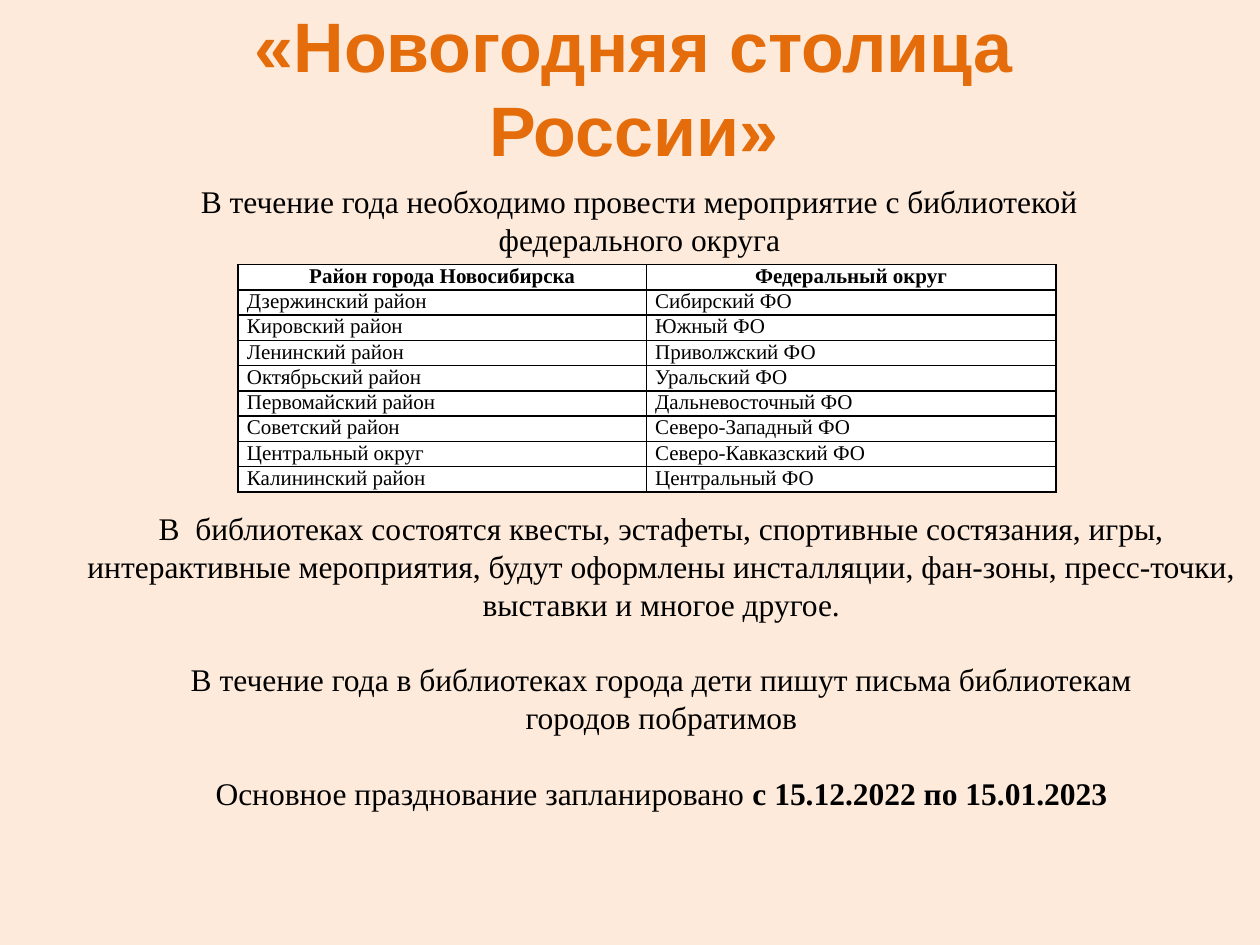
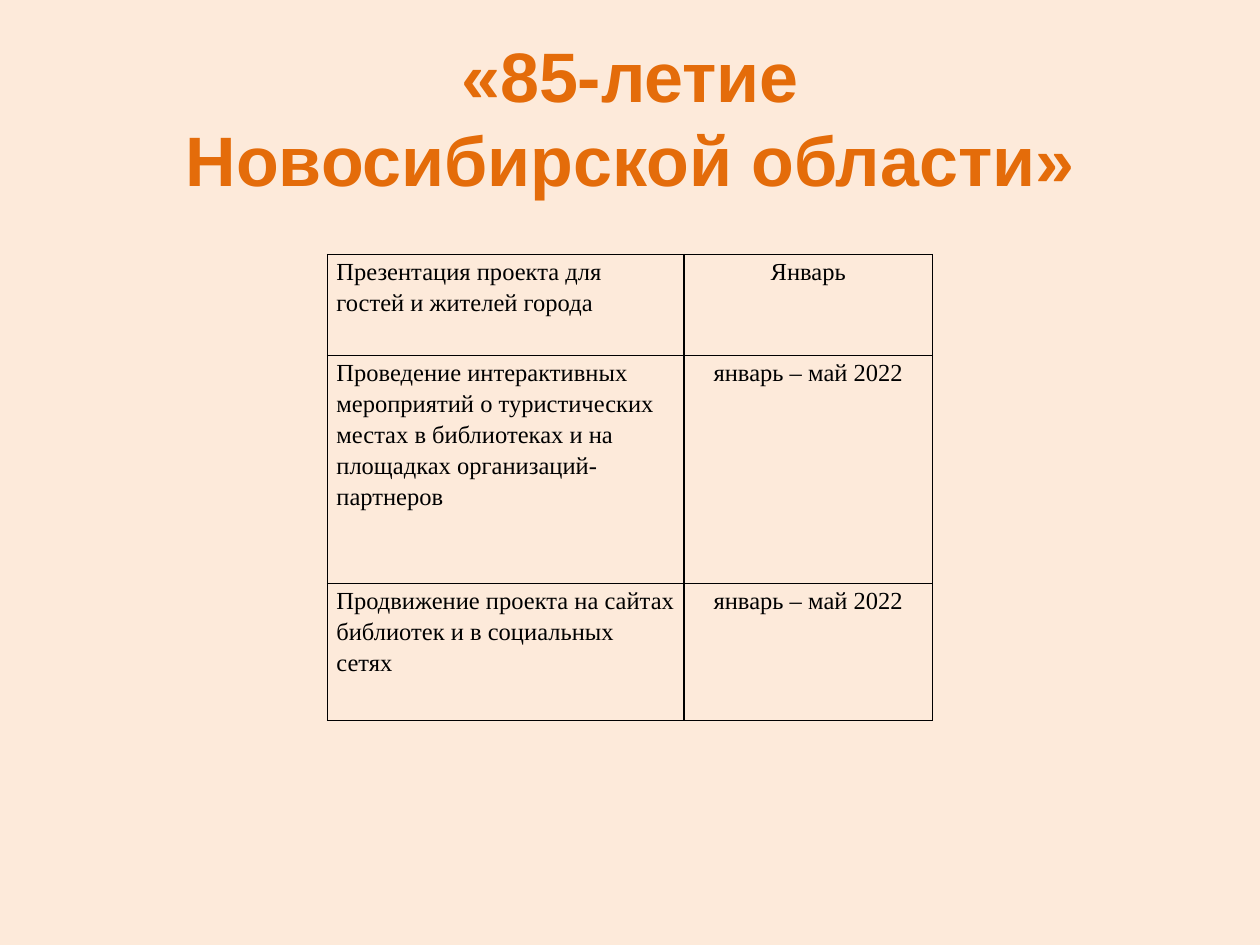
from dataclasses import dataclass
from typing import Optional

from lxml import etree
from pptx import Presentation
from pptx import util as u
from pptx.dml.color import RGBColor
from pptx.enum import text
from pptx.oxml.ns import qn

COLORS = {
    "background": "FDEADA",
    "title": "E46C0A",
    "text": "000000",
    "border": "000000",
    "cell": "FFFFFF",
}
TITLE_FONT = "Arial"
BODY_FONT = "Times New Roman"
BODY_SIZE = 18
BLANK_LINE = u.Pt(21.7)
CENTER = text.PP_ALIGN.CENTER
LEFT = text.PP_ALIGN.LEFT


@dataclass(frozen=True)
class Box:
    left: float
    top: float
    width: float
    height: float

    def place(self, shape) -> None:
        shape.left, shape.top = u.Inches(self.left), u.Inches(self.top)
        shape.width, shape.height = u.Inches(self.width), u.Inches(self.height)


@dataclass(frozen=True)
class Line:
    """One paragraph: plain words, then an optional bold ending."""
    words: str
    bold_ending: str = ""
    gap_before: bool = False


@dataclass(frozen=True)
class TableStyle:
    size: int
    alignments: tuple[text.PP_ALIGN, ...]
    fill: Optional[str] = None
    header: bool = False
    line_spacing: float = 1.0


DISTRICTS = [
    ("Район города Новосибирска", "Федеральный округ"),
    ("Дзержинский район", "Сибирский ФО"),
    ("Кировский район", "Южный ФО"),
    ("Ленинский район", "Приволжский ФО"),
    ("Октябрьский район", "Уральский ФО"),
    ("Первомайский район", "Дальневосточный ФО"),
    ("Советский район", "Северо-Западный ФО"),
    ("Центральный округ", "Северо-Кавказский ФО"),
    ("Калининский район", "Центральный ФО"),
]
PROJECT_PLAN = [
    ("Презентация проекта для гостей и жителей города", "Январь"),
    ("Проведение интерактивных мероприятий о туристических местах в "
     "библиотеках и на площадках организаций-партнеров", "январь – май 2022"),
    ("Продвижение проекта на сайтах библиотек и в социальных сетях",
     "январь – май 2022"),
]
INTRODUCTION = [
    Line("В течение года необходимо провести мероприятие с библиотекой"),
    Line("федерального округа"),
]
EVENTS = [
    Line("В  библиотеках состоятся квесты, эстафеты, спортивные состязания, игры, "
         "интерактивные мероприятия, будут оформлены инсталляции, фан-зоны, "
         "пресс-точки, выставки и многое другое."),
    Line("В течение года в библиотеках города дети пишут письма библиотекам",
         gap_before=True),
    Line("городов побратимов"),
    Line("Основное празднование запланировано ", "с 15.12.2022 по 15.01.2023",
         gap_before=True),
]


def rgb(name: str) -> RGBColor:
    return RGBColor.from_string(COLORS[name])


def format_runs(paragraph, font: str, size: int, color: str, bold: bool = False) -> None:
    for run in paragraph.runs:
        run.font.name = font
        run.font.size = u.Pt(size)
        run.font.bold = bold
        run.font.color.rgb = rgb(color)


def add_titled_slide(presentation, layout, title: str, box: Box):
    slide = presentation.slides.add_slide(layout)
    shape = slide.shapes.title
    box.place(shape)
    frame = shape.text_frame
    frame.text = title
    frame.word_wrap = True
    frame.auto_size = text.MSO_AUTO_SIZE.NONE
    frame.vertical_anchor = text.MSO_ANCHOR.TOP
    for paragraph in frame.paragraphs:
        paragraph.alignment = CENTER
        format_runs(paragraph, TITLE_FONT, 40, "title", bold=True)
    return slide


def add_centered_text(slide, box: Box, lines: list[Line],
                      anchor=text.MSO_ANCHOR.TOP) -> None:
    shape = slide.shapes.add_textbox(0, 0, 0, 0)
    box.place(shape)
    frame = shape.text_frame
    frame.word_wrap = True
    frame.vertical_anchor = anchor
    frame.text = "\n".join(line.words for line in lines)
    for paragraph, line in zip(frame.paragraphs, lines):
        paragraph.alignment = CENTER
        if line.gap_before:
            paragraph.space_before = BLANK_LINE
        if line.bold_ending:
            paragraph.add_run().text = line.bold_ending
        format_runs(paragraph, BODY_FONT, BODY_SIZE, "text")
        if line.bold_ending:
            paragraph.runs[-1].font.bold = True


def add_borders(cell) -> None:
    properties = cell._tc.get_or_add_tcPr()
    for side in ("a:lnL", "a:lnR", "a:lnT", "a:lnB"):
        border = etree.SubElement(properties, qn(side), w=str(u.Pt(1)))
        fill = etree.SubElement(border, qn("a:solidFill"))
        etree.SubElement(fill, qn("a:srgbClr"), val=COLORS["border"])


def format_cell(cell, words: str, style: TableStyle, alignment, bold: bool) -> None:
    add_borders(cell)
    if style.fill:
        cell.fill.solid()
        cell.fill.fore_color.rgb = rgb(style.fill)
    else:
        cell.fill.background()
    cell.margin_left = cell.margin_right = u.Inches(0.07)
    cell.margin_top = cell.margin_bottom = 0
    cell.text_frame.text = words
    paragraph = cell.text_frame.paragraphs[0]
    paragraph.alignment = alignment
    paragraph.line_spacing = style.line_spacing
    format_runs(paragraph, BODY_FONT, style.size, "text", bold)


def add_grid(slide, left: float, top: float, widths: list[float],
             heights: list[float], rows: list[tuple[str, str]],
             style: TableStyle) -> None:
    table = slide.shapes.add_table(
        len(rows), len(widths), u.Inches(left), u.Inches(top),
        u.Inches(sum(widths)), u.Inches(sum(heights))).table
    table.first_row = style.header
    table.horz_banding = False
    for column, width in zip(table.columns, widths):
        column.width = u.Inches(width)
    for row, height in zip(table.rows, heights):
        row.height = u.Inches(height)
    for row_index, row in enumerate(rows):
        is_header = style.header and row_index == 0
        for column_index, words in enumerate(row):
            alignment = CENTER if is_header else style.alignments[column_index]
            format_cell(table.cell(row_index, column_index), words, style,
                        alignment, is_header)


def add_capital_slide(presentation, layout) -> None:
    slide = add_titled_slide(presentation, layout, "«Новогодняя столица\nРоссии»",
                             Box(1.89, -0.03, 6.28, 1.45))
    add_centered_text(slide, Box(0, 1.39, 10.15, 0.71), INTRODUCTION,
                      text.MSO_ANCHOR.MIDDLE)
    add_centered_text(slide, Box(0.35, 3.99, 9.8, 3.43), EVENTS)
    add_grid(slide, 1.89, 2.1, [3.24, 3.25], [0.2] * len(DISTRICTS), DISTRICTS,
             TableStyle(12, (LEFT, LEFT), fill="cell", header=True))


def add_anniversary_slide(presentation, layout) -> None:
    slide = add_titled_slide(presentation, layout,
                             "«85-летие\nНовосибирской области»",
                             Box(0, 0.21, 10, 1.45))
    add_grid(slide, 2.6, 2.02, [2.83, 1.97], [0.8, 1.81, 1.09], PROJECT_PLAN,
             TableStyle(14, (LEFT, CENTER), line_spacing=1.15))


def main() -> None:
    presentation = Presentation()
    presentation.slide_width = u.Inches(10)
    presentation.slide_height = u.Inches(7.5)
    layout = presentation.slide_layouts.get_by_name("Title Only")
    layout.background.fill.solid()
    layout.background.fill.fore_color.rgb = rgb("background")
    add_capital_slide(presentation, layout)
    add_anniversary_slide(presentation, layout)
    presentation.save("out.pptx")


if __name__ == "__main__":
    main()
